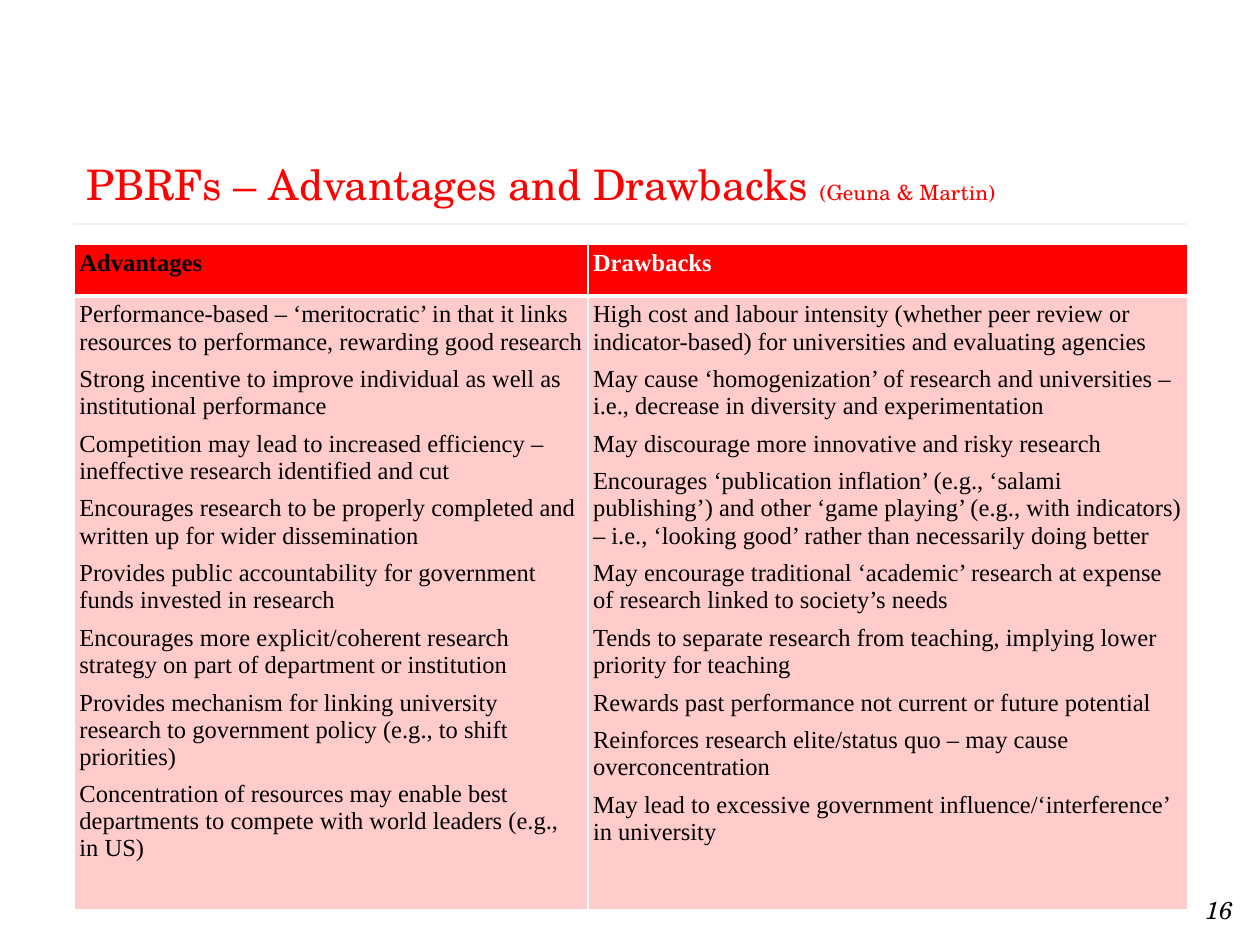
from dataclasses import dataclass

from lxml.etree import SubElement
from pptx import Presentation
from pptx.dml.color import RGBColor as RGB
from pptx.enum.shapes import MSO_CONNECTOR
from pptx.enum.text import MSO_ANCHOR, PP_ALIGN
from pptx.oxml.ns import qn
from pptx.util import Pt


@dataclass(frozen=True)
class Theme:
    red: RGB = RGB(0xFF, 0x00, 0x00)
    pink: RGB = RGB(0xFF, 0xCB, 0xCB)
    black: RGB = RGB(0x00, 0x00, 0x00)
    white: RGB = RGB(0xFF, 0xFF, 0xFF)
    gray: RGB = RGB(0x80, 0x80, 0x80)
    display: str = "TeX Gyre Schola"
    body: str = "Times New Roman"
    title_size: int = 24
    source_size: int = 12
    text_size: int = 14


THEME = Theme()

ADVANTAGES = [
    "Performance-based – ‘meritocratic’ in that it links resources to performance, rewarding good research",
    "Strong incentive to improve individual as well as institutional performance",
    "Competition may lead to increased efficiency – ineffective research identified and cut",
    "Encourages research to be properly completed and written up for wider dissemination",
    "Provides public accountability for government funds invested in research",
    "Encourages more explicit/coherent research strategy on part of department or institution",
    "Provides mechanism for linking university research to government policy (e.g., to shift priorities)",
    "Concentration of resources may enable best departments to compete with world leaders (e.g., in US)",
]
DRAWBACKS = [
    "High cost and labour intensity (whether peer review or indicator-based) for universities and evaluating agencies",
    "May cause ‘homogenization’ of research and universities – i.e., decrease in diversity and experimentation",
    "May discourage more innovative and risky research",
    "Encourages ‘publication inflation’ (e.g., ‘salami publishing’) and other ‘game playing’ (e.g., with indicators) "
    "– i.e., ‘looking good’ rather than necessarily doing better",
    "May encourage traditional ‘academic’ research at expense of research linked to society’s needs",
    "Tends to separate research from teaching, implying lower priority for teaching",
    "Rewards past performance not current or future potential",
    "Reinforces research elite/status quo – may cause overconcentration",
    "May lead to excessive government influence/‘interference’ in university",
]
COLUMNS = [
    ("Advantages", THEME.black, ADVANTAGES, 293.5),
    ("Drawbacks", THEME.white, DRAWBACKS, 342.5),
]


def set_font(font, name, size, color, bold=False, italic=False):
    font.name, font.size = name, Pt(size)
    font.color.rgb = color
    font.bold, font.italic = bold, italic


def add_title(s, text, source):
    sp = s.shapes.title
    sp.left, sp.top, sp.width, sp.height = Pt(42), Pt(84), Pt(636), Pt(42)
    tf = sp.text_frame
    tf.vertical_anchor = MSO_ANCHOR.MIDDLE
    p = tf.paragraphs[0]
    p.alignment = PP_ALIGN.LEFT
    set_font(p.font, THEME.display, THEME.title_size, THEME.red)
    p.add_run().text = text
    r = p.add_run()
    r.text = source
    r.font.size = Pt(THEME.source_size)


def add_rule(s, left, right, y):
    line = s.shapes.add_connector(MSO_CONNECTOR.STRAIGHT, Pt(left), Pt(y), Pt(right), Pt(y))
    line.line.width = Pt(0.5)
    line.line.color.rgb = THEME.gray
    spPr = line._element.spPr
    SubElement(spPr.find(".//" + qn("a:srgbClr")), qn("a:alpha"), val="35000")
    SubElement(spPr, qn("a:effectLst"))


def add_page_number(s, text):
    box = s.shapes.add_textbox(Pt(626.5), Pt(508), Pt(85), Pt(24))
    tf = box.text_frame
    tf.word_wrap = True
    p = tf.paragraphs[0]
    p.text = text
    p.alignment = PP_ALIGN.RIGHT
    set_font(p.font, THEME.display, THEME.text_size, THEME.black, italic=True)


def set_borders(cell, **widths):
    tcPr = cell._tc.get_or_add_tcPr()
    for side, width in widths.items():
        ln = SubElement(tcPr, qn(f"a:ln{side}"), w=str(Pt(width)))
        fill = SubElement(ln, qn("a:solidFill"))
        SubElement(fill, qn("a:srgbClr"), val=str(THEME.white))


def fill_cell(cell, lines, fill, color, bold=False, space_after=0, top=1, bottom=1):
    set_borders(cell, L=1, R=1, T=top, B=bottom)
    cell.fill.solid()
    cell.fill.fore_color.rgb = fill
    cell.margin_left = cell.margin_right = cell.margin_top = cell.margin_bottom = Pt(2.9)
    tf = cell.text_frame
    for i, line in enumerate(lines):
        p = tf.add_paragraph() if i else tf.paragraphs[0]
        p.text = line
        p.space_after = Pt(space_after)
        set_font(p.font, THEME.body, THEME.text_size, color, bold=bold)


def add_comparison(s, columns):
    heights = (29.5, 325)
    width = sum(column[-1] for column in columns)
    frame = s.shapes.add_table(2, len(columns), Pt(42.5), Pt(139.7), Pt(width), Pt(sum(heights)))
    table = frame.table
    for row, height in zip(table.rows, heights):
        row.height = Pt(height)
    for i, (heading, color, points, col_width) in enumerate(columns):
        table.columns[i].width = Pt(col_width)
        fill_cell(table.cell(0, i), [heading], THEME.red, color, bold=True, bottom=3)
        fill_cell(table.cell(1, i), points, THEME.pink, THEME.black, space_after=6, top=3)


def main():
    prs = Presentation()
    prs.slide_width, prs.slide_height = Pt(720), Pt(540)
    s = prs.slides.add_slide(prs.slide_layouts[5])
    add_rule(s, 42, 678, 128)
    add_page_number(s, "16")
    add_title(s, "PBRFs –\u00a0Advantages and Drawbacks ".replace("\u00a0", " "), "(Geuna & Martin)")
    add_comparison(s, COLUMNS)
    prs.save("out.pptx")


if __name__ == "__main__":
    main()
